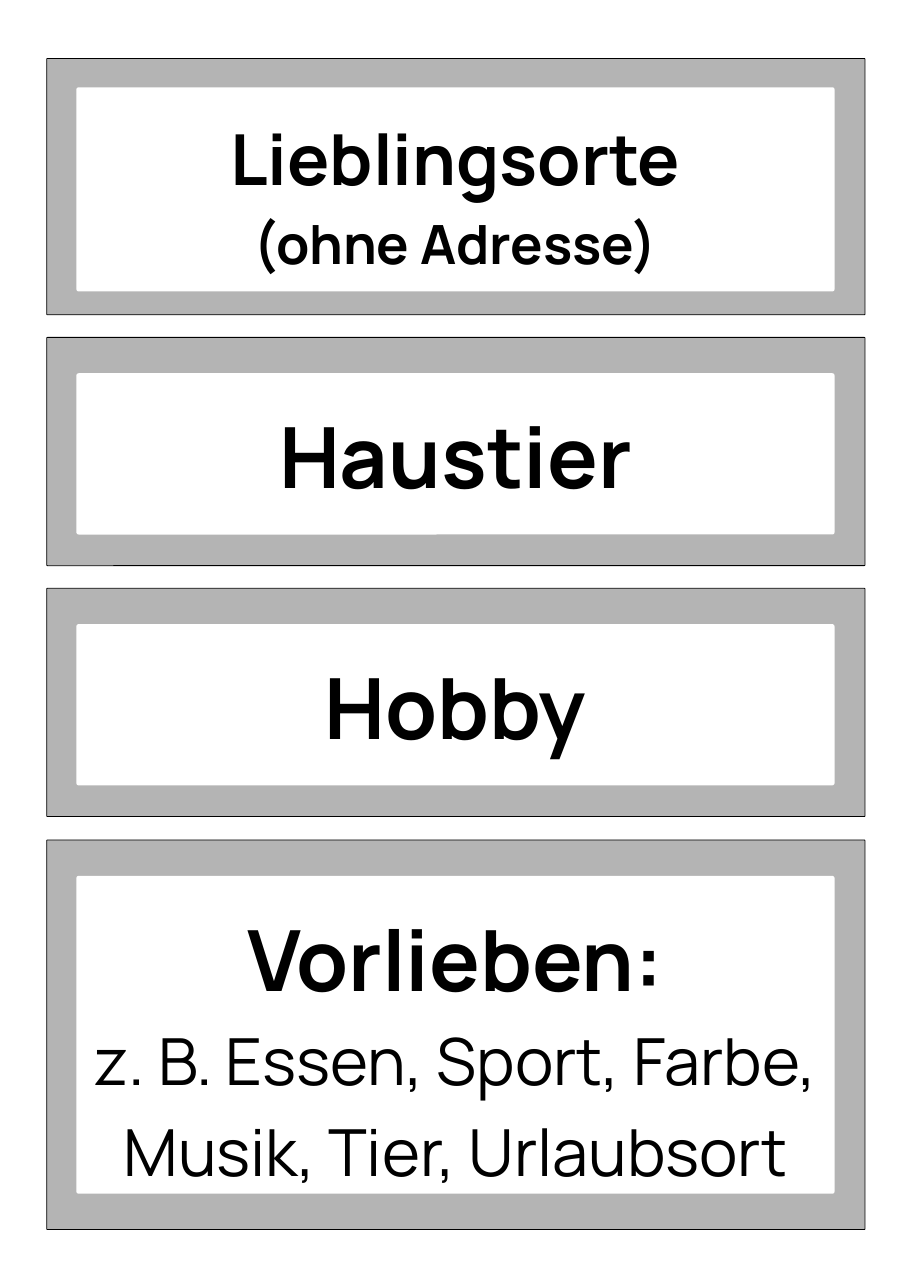
"""Build a portrait sheet of four framed word cards for a profile page."""
from pptx import Presentation
from pptx.dml.color import RGBColor
from pptx.enum.shapes import MSO_SHAPE
from pptx.enum.text import MSO_ANCHOR, MSO_AUTO_SIZE, PP_ALIGN
from pptx.util import Inches, Pt

BLACK = RGBColor(0x00, 0x00, 0x00)
WHITE = RGBColor(0xFF, 0xFF, 0xFF)
GREY = RGBColor(0xB4, 0xB4, 0xB4)
ROUNDED = MSO_SHAPE.ROUNDED_RECTANGLE
TOP = MSO_ANCHOR.TOP
FIT_SHAPE = MSO_AUTO_SIZE.SHAPE_TO_FIT_TEXT
CENTER = PP_ALIGN.CENTER

FONT = "Manrope"
LINE_FACTOR = 1.4
TEXT_OFFSET = 0.18

# top, height, panel offset, panel height, text height, lines (text, size, bold)
CARDS = [
    (0.75, 3.29, 0.37, 2.62, 2.22,
     [("Lieblingsorte", 65, True), ("(ohne Adresse)", 50, True)]),
    (4.33, 2.93, 0.46, 2.07, 1.48, [("Haustier", 78, True)]),
    (7.55, 2.93, 0.46, 2.07, 1.48, [("Hobby", 78, True)]),
    (10.78, 5, 0.46, 4.08, 3.82,
     [("Vorlieben:", 78, True),
      ("z. B. Essen, Sport, Farbe, Musik, Tier, Urlaubsort", 60, False)]),
]


def add_panel(shapes, left, top, width, height, *, color, radius, outlined=False):
    panel = shapes.add_shape(
        ROUNDED, Inches(left), Inches(top), Inches(width), Inches(height))
    panel.adjustments[0] = radius / height
    panel.shadow.inherit = False
    panel.fill.solid()
    panel.fill.fore_color.rgb = color
    if outlined:
        panel.line.color.rgb = BLACK
        panel.line.width = Pt(0.75)
    else:
        panel.line.fill.background()


def add_lines(shapes, left, top, width, height, *, lines):
    box = shapes.add_textbox(
        Inches(left), Inches(top), Inches(width), Inches(height))
    frame = box.text_frame
    frame.word_wrap = True
    frame.auto_size = FIT_SHAPE
    frame.vertical_anchor = TOP
    frame.margin_left = frame.margin_right = 0
    frame.margin_top = frame.margin_bottom = 0
    for index, (text, size, bold) in enumerate(lines):
        paragraph = frame.add_paragraph() if index else frame.paragraphs[0]
        paragraph.alignment = CENTER
        paragraph.line_spacing = Pt(size * LINE_FACTOR)
        run = paragraph.add_run()
        run.text = text
        run.font.name = FONT
        run.font.size = Pt(size)
        run.font.bold = bold
        run.font.color.rgb = BLACK


presentation = Presentation()
presentation.slide_width = Inches(11.69)
presentation.slide_height = Inches(16.53)
slide = presentation.slides.add_slide(presentation.slide_layouts[6])

for top, height, panel_offset, panel_height, text_height, lines in CARDS:
    card = slide.shapes.add_group_shape().shapes
    panel_top = top + panel_offset
    add_panel(card, 0.6, top, 10.5, height, color=GREY, radius=0.01, outlined=True)
    add_panel(card, 0.98, panel_top, 9.73, panel_height, color=WHITE, radius=0.03)
    add_lines(card, 1.07, panel_top + TEXT_OFFSET, 9.55, text_height, lines=lines)

presentation.save("out.pptx")
